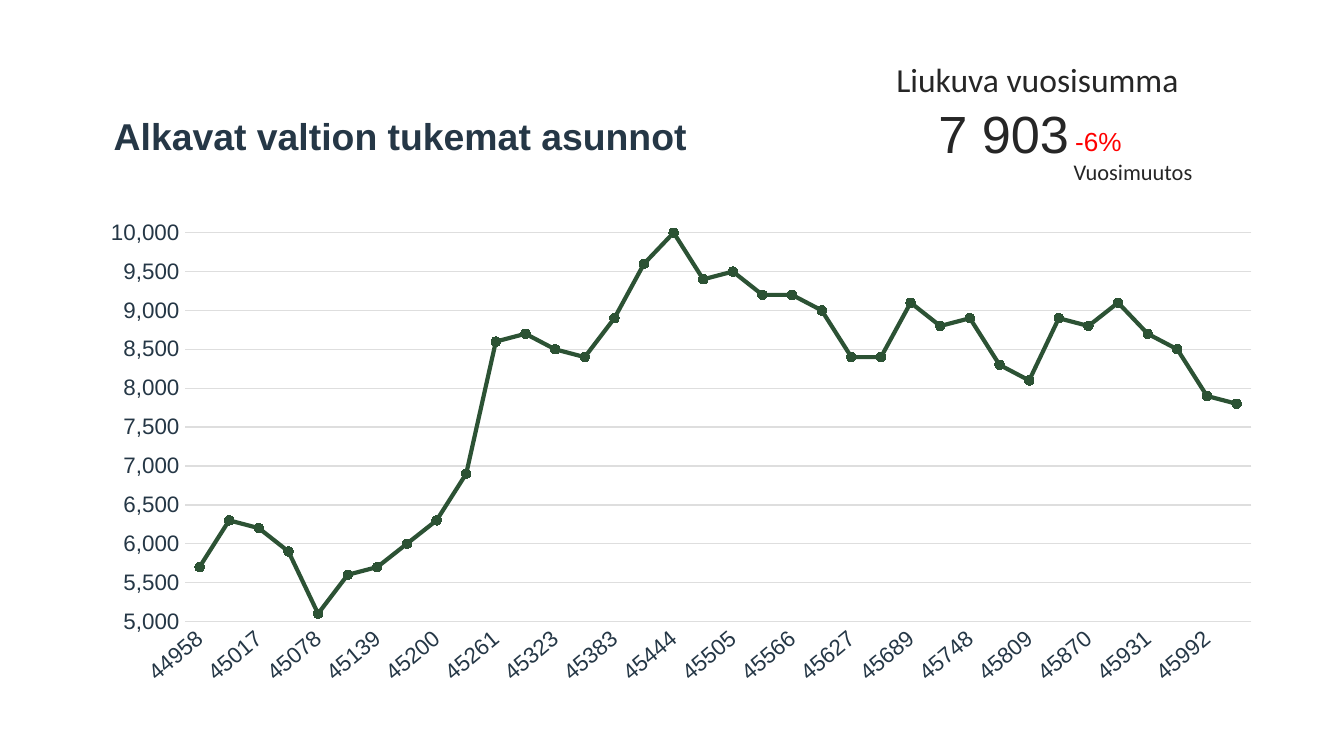
from lxml import etree
from pptx import Presentation
from pptx.chart.data import CategoryChartData
from pptx.dml.color import RGBColor
from pptx.enum.chart import XL_CHART_TYPE, XL_MARKER_STYLE, XL_TICK_MARK
from pptx.enum.text import MSO_ANCHOR, MSO_AUTO_SIZE, PP_ALIGN
from pptx.oxml.ns import qn
from pptx.util import Cm, Pt

NAVY = RGBColor(0x25, 0x37, 0x46)
DARK = RGBColor(0x26, 0x26, 0x26)
RED = RGBColor(0xFF, 0x00, 0x00)
GREEN = RGBColor(0x2C, 0x52, 0x34)
GREY = RGBColor(0xDE, 0xDE, 0xDE)
TOP, MIDDLE, BOTTOM = MSO_ANCHOR.TOP, MSO_ANCHOR.MIDDLE, MSO_ANCHOR.BOTTOM
LEFT, RIGHT = PP_ALIGN.LEFT, PP_ALIGN.RIGHT
FIT, FIXED = MSO_AUTO_SIZE.SHAPE_TO_FIT_TEXT, MSO_AUTO_SIZE.NONE
LINE, CIRCLE = XL_CHART_TYPE.LINE_MARKERS, XL_MARKER_STYLE.CIRCLE
NO_TICK = XL_TICK_MARK.NONE

# text, box in cm, font, size, colour, bold, anchor, alignment, fit
TEXTS = [
    ("Alkavat valtion tukemat asunnot", (1.9, 2.08, 13.21, 0.97),
     "Arial", 20, NAVY, True, MIDDLE, LEFT, FIXED),
    ("-6%", (20.07, 2.24, 3.66, 0.84), "Arial", 14, RED, False, BOTTOM, LEFT, FIT),
    ("7\u00a0903", (15.14, 1.78, 5.31, 1.45), "Arial", 28, DARK, False, BOTTOM, RIGHT, FIT),
    ("Vuosimuutos", (20.04, 2.87, 3.2, 0.76), "Calibri", 12, DARK, False, TOP, LEFT, FIT),
    ("Liukuva vuosisumma", (16.69, 0.99, 6.15, 1.02),
     "Calibri", 18, DARK, False, TOP, LEFT, FIT),
]

MONTHS = [
    44958, 44986, 45017, 45047, 45078, 45108, 45139, 45170, 45200, 45231, 45261, 45292,
    45323, 45352, 45383, 45413, 45444, 45474, 45505, 45536, 45566, 45597, 45627, 45658,
    45689, 45717, 45748, 45778, 45809, 45839, 45870, 45901, 45931, 45962, 45992, 46023,
]
HOMES = [
    5700, 6300, 6200, 5900, 5100, 5600, 5700, 6000, 6300, 6900, 8600, 8700,
    8500, 8400, 8900, 9600, 10000, 9400, 9500, 9200, 9200, 9000, 8400, 8400,
    9100, 8800, 8900, 8300, 8100, 8900, 8800, 9100, 8700, 8500, 7900, 7800,
]
CHART_BOX = (1.7, 3.94, 22.4, 9.19)
PLOT = {"x": 0.08, "y": 0.05, "w": 0.9, "h": 0.8}


def style(font, name, size, color, bold=False):
    font.name, font.size, font.bold = name, Pt(size), bold
    font.color.rgb = color


def add_text(slide, text, box, name, size, color, bold, anchor, align, fit):
    frame = slide.shapes.add_textbox(*map(Cm, box)).text_frame
    frame.word_wrap = True
    frame.auto_size = fit
    frame.vertical_anchor = anchor
    para = frame.paragraphs[0]
    para.text = text
    para.alignment = align
    style(para.runs[0].font, name, size, color, bold)


def place_plot(chart):
    """Fix the inner plot area as fractions of the chart."""
    area = chart._chartSpace.chart.plotArea
    for old in area.findall(qn("c:layout")):
        area.remove(old)
    layout = etree.Element(qn("c:layout"))
    area.insert(0, layout)
    manual = etree.SubElement(layout, qn("c:manualLayout"))
    parts = {"layoutTarget": "inner", "xMode": "edge", "yMode": "edge", **PLOT}
    for tag, val in parts.items():
        etree.SubElement(manual, qn("c:" + tag)).set("val", str(val))


def add_chart(slide):
    data = CategoryChartData(number_format="#,##0")
    data.categories = [str(month) for month in MONTHS]
    data.add_series("Series 1", HOMES)
    chart = slide.shapes.add_chart(LINE, *map(Cm, CHART_BOX), data).chart
    chart.has_title = chart.has_legend = False
    style(chart.font, "DejaVu Sans", 10, DARK)
    chart.plots[0].vary_by_categories = False

    line = chart.plots[0].series[0]
    line.smooth = False
    line.format.line.color.rgb = GREEN
    line.format.line.width = Pt(2.25)
    line.marker.style, line.marker.size = CIRCLE, 5
    line.marker.format.fill.solid()
    line.marker.format.fill.fore_color.rgb = GREEN
    line.marker.format.line.color.rgb = GREEN

    dates, count = chart.category_axis, chart.value_axis
    for axis in (dates, count):
        axis.major_tick_mark = axis.minor_tick_mark = NO_TICK
        axis.format.line.fill.background()
        style(axis.tick_labels.font, "Arial", 12, NAVY)
    slant = dates._element.find(qn("c:txPr")).find(qn("a:bodyPr"))
    slant.set("rot", str(-40 * 60000))

    count.minimum_scale, count.maximum_scale, count.major_unit = 5000, 10000, 500
    count.tick_labels.number_format = "#,##0"
    count.tick_labels.number_format_is_linked = False
    grid = count.major_gridlines.format.line
    grid.color.rgb, grid.width = GREY, Pt(0.75)
    place_plot(chart)


def main():
    deck = Presentation()
    deck.slide_width, deck.slide_height = Cm(25.4), Cm(14.29)
    slide = deck.slides.add_slide(deck.slide_layouts[6])
    add_chart(slide)
    for item in TEXTS:
        add_text(slide, *item)
    deck.save("out.pptx")


if __name__ == "__main__":
    main()
